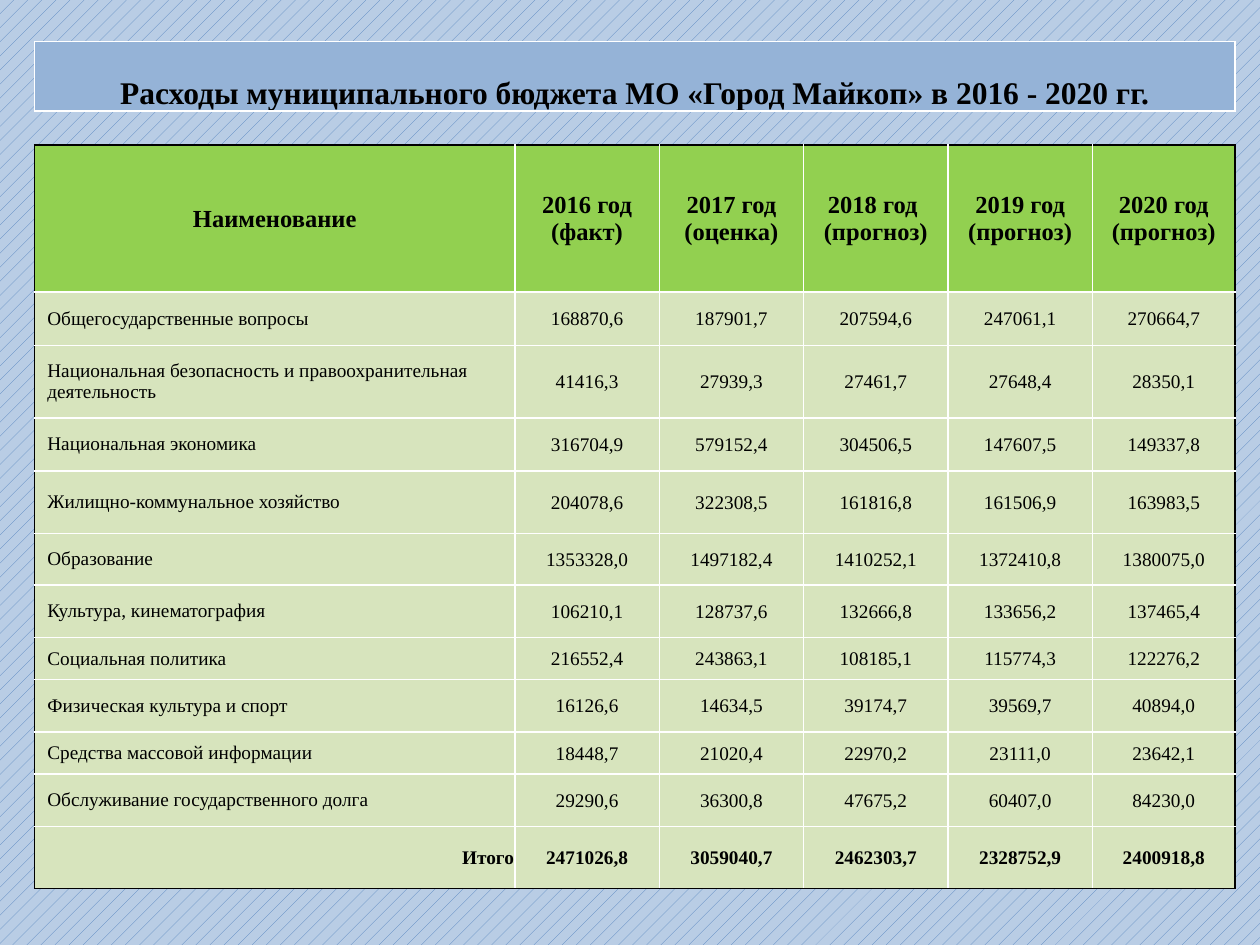
from lxml import etree
from pptx import Presentation
from pptx.dml.color import RGBColor
from pptx.enum.dml import MSO_PATTERN
from pptx.enum.text import MSO_ANCHOR, PP_ALIGN
from pptx.oxml.ns import qn
from pptx.util import Cm, Pt

DOTS = MSO_PATTERN.PERCENT_10
MIDDLE, BOTTOM = MSO_ANCHOR.MIDDLE, MSO_ANCHOR.BOTTOM
LEFT, CENTER, RIGHT = PP_ALIGN.LEFT, PP_ALIGN.CENTER, PP_ALIGN.RIGHT

FONT = "Times New Roman"
BLACK, WHITE = "000000", "FFFFFF"
TITLE_BLUE, HEADER_GREEN, BODY_GREEN = "95B3D7", "92D050", "D7E4BD"
PATTERN_BLUE, PAGE_BLUE = "4F81BD", "B9CDE5"

BLANK_LAYOUT = 6
TITLE = "Расходы муниципального бюджета МО «Город Майкоп» в 2016 - 2020 гг."
HEADINGS = ("Наименование", "2016 год\n(факт)", "2017 год\n(оценка)",
            "2018 год \n(прогноз)", "2019 год (прогноз)", "2020 год\n(прогноз)")
EXPENSES = (
    ("Общегосударственные вопросы",
     "168870,6", "187901,7", "207594,6", "247061,1", "270664,7"),
    ("Национальная безопасность и правоохранительная деятельность",
     "41416,3", "27939,3", "27461,7", "27648,4", "28350,1"),
    ("Национальная экономика",
     "316704,9", "579152,4", "304506,5", "147607,5", "149337,8"),
    ("Жилищно-коммунальное хозяйство",
     "204078,6", "322308,5", "161816,8", "161506,9", "163983,5"),
    ("Образование",
     "1353328,0", "1497182,4", "1410252,1", "1372410,8", "1380075,0"),
    ("Культура, кинематография",
     "106210,1", "128737,6", "132666,8", "133656,2", "137465,4"),
    ("Социальная политика",
     "216552,4", "243863,1", "108185,1", "115774,3", "122276,2"),
    ("Физическая культура и спорт",
     "16126,6", "14634,5", "39174,7", "39569,7", "40894,0"),
    ("Средства массовой информации",
     "18448,7", "21020,4", "22970,2", "23111,0", "23642,1"),
    ("Обслуживание государственного долга",
     "29290,6", "36300,8", "47675,2", "60407,0", "84230,0"),
)
TOTALS = ("Итого", "2471026,8", "3059040,7", "2462303,7", "2328752,9", "2400918,8")
COLUMN_WIDTHS = (9.68, 2.91, 2.91, 2.91, 2.91, 2.88)
ROW_HEIGHTS = (2.97, 1.07, 1.47, 1.06, 1.26, 1.04, 1.06, 0.85, 1.06, 0.84, 1.06, 1.25)


def color(value):
    """Turn a hex string into a colour."""
    return RGBColor.from_string(value)


def set_borders(cell, left, right, top, bottom):
    """Draw the four cell borders in the given colours."""
    properties = cell._tc.get_or_add_tcPr()
    for tag, value in zip(("a:lnL", "a:lnR", "a:lnT", "a:lnB"), (left, right, top, bottom)):
        border = etree.SubElement(properties, qn(tag), w=str(Pt(1)))
        solid = etree.SubElement(border, qn("a:solidFill"))
        etree.SubElement(solid, qn("a:srgbClr"), val=value)


def fill_cell(cell, text, fill, size, bold, align=CENTER, anchor=MIDDLE, tight=True):
    """Write and format the text of one cell."""
    cell.fill.solid()
    cell.fill.fore_color.rgb = color(fill)
    cell.vertical_anchor = anchor
    if tight:
        cell.margin_left = cell.margin_right = cell.margin_top = Cm(0.02)
        cell.margin_bottom = 0
    cell.text = text
    for paragraph in cell.text_frame.paragraphs:
        paragraph.alignment = align
        paragraph.font.name = FONT
        paragraph.font.size = Pt(size)
        paragraph.font.bold = bold
        paragraph.font.color.rgb = color(BLACK)


def add_grid(slide, left, top, widths, heights):
    """Add a plain table with the given column widths and row heights."""
    grid = slide.shapes.add_table(len(heights), len(widths), Cm(left), Cm(top),
                                  Cm(sum(widths)), Cm(sum(heights))).table
    grid.first_row = grid.horz_banding = False
    for column, width in zip(grid.columns, widths):
        column.width = Cm(width)
    for row, height in zip(grid.rows, heights):
        row.height = Cm(height)
    return grid


def add_title_band(slide, left, top, width, height):
    """Add the one-cell title band."""
    title = add_grid(slide, left, top, (width,), (height,)).cell(0, 0)
    set_borders(title, WHITE, WHITE, WHITE, WHITE)
    fill_cell(title, TITLE, TITLE_BLUE, 18, True, anchor=BOTTOM)


def add_budget_table(slide, left, top):
    """Add the expense table with a black outer frame."""
    budget = add_grid(slide, left, top, COLUMN_WIDTHS, ROW_HEIGHTS)
    last_row, last_column = len(ROW_HEIGHTS) - 1, len(COLUMN_WIDTHS) - 1
    for r, entries in enumerate((HEADINGS, *EXPENSES, TOTALS)):
        header, total = r == 0, r == last_row
        for c, entry in enumerate(entries):
            cell = budget.cell(r, c)
            outer = (c == 0, c == last_column, header, total)
            set_borders(cell, *(BLACK if edge else WHITE for edge in outer))
            label = c == 0 and not header
            align = CENTER if not label else RIGHT if total else LEFT
            fill_cell(cell, entry, HEADER_GREEN if header else BODY_GREEN,
                      14 if header else 11, header or total, align,
                      tight=total or not label)


def main():
    """Build and save the budget slide."""
    presentation = Presentation()
    presentation.slide_width, presentation.slide_height = Cm(25.4), Cm(19.05)
    slide = presentation.slides.add_slide(presentation.slide_layouts[BLANK_LAYOUT])
    backdrop = slide.background.fill
    backdrop.patterned()
    backdrop.pattern = DOTS
    backdrop.fore_color.rgb = color(PATTERN_BLUE)
    backdrop.back_color.rgb = color(PAGE_BLUE)
    add_title_band(slide, 0.7, 0.84, sum(COLUMN_WIDTHS), 1.4)
    add_budget_table(slide, 0.7, 2.92)
    presentation.save("out.pptx")


if __name__ == "__main__":
    main()
